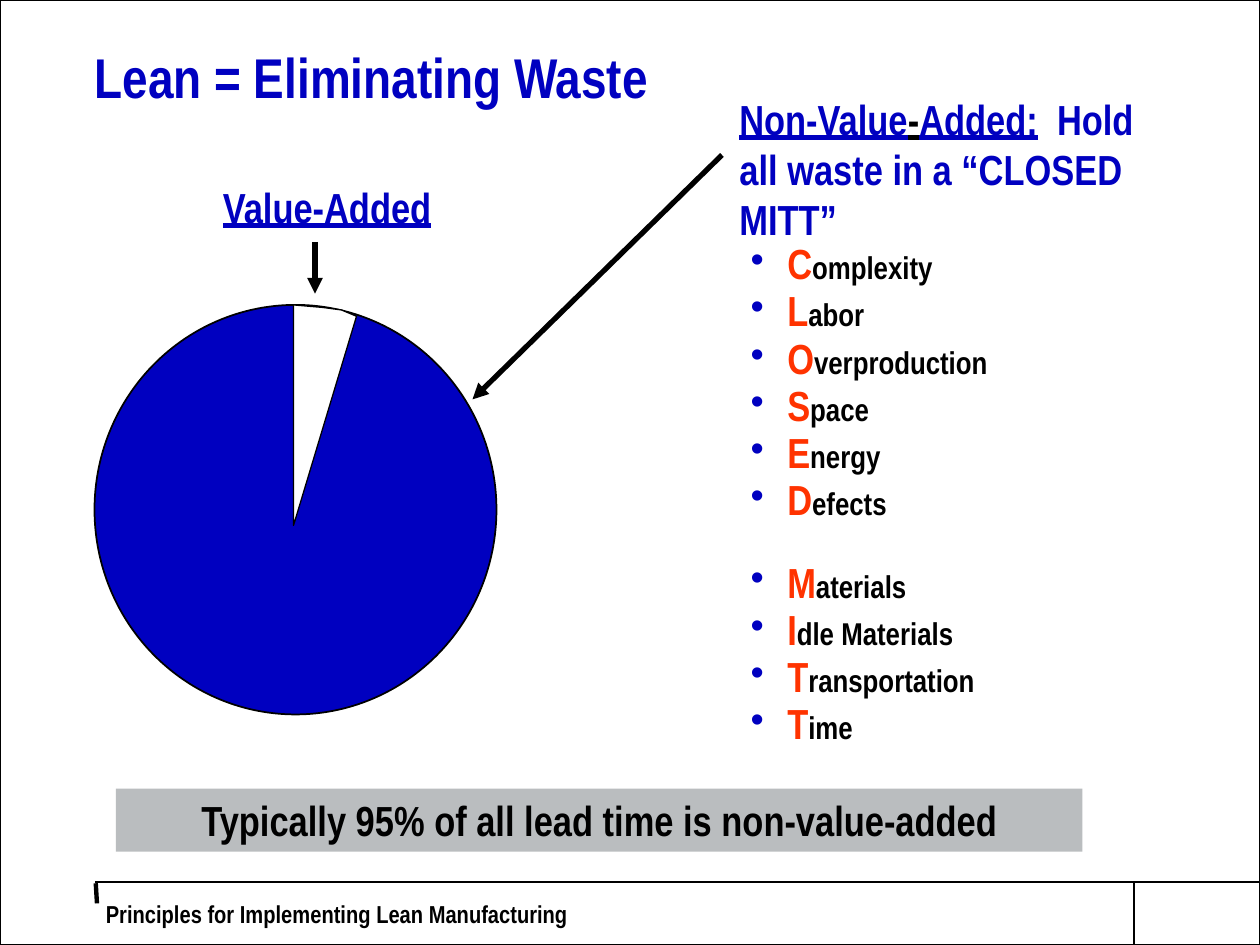
from dataclasses import dataclass

from lxml import etree
from pptx import Presentation
from pptx import util as u
from pptx.dml.color import RGBColor
from pptx.enum import shapes, text
from pptx.oxml.ns import qn


@dataclass(frozen=True)
class Theme:
    font: str = "Arial Narrow"
    blue: str = "0000C0"
    red: str = "FF3300"
    black: str = "000000"
    white: str = "FFFFFF"
    gray: str = "BABDBF"
    title: int = 32
    heading: int = 24
    body: int = 18
    footer: int = 14


def box(*lengths):
    return [u.Inches(n) for n in lengths]


class SlideBuilder:
    def __init__(self, slide, theme):
        self.slide = slide
        self.theme = theme

    def run(self, p, words, size, color, underline=False):
        r = p.add_run()
        r.text = words
        r.font.name = self.theme.font
        r.font.size = u.Pt(size)
        r.font.bold = True
        r.font.underline = underline
        r.font.color.rgb = RGBColor.from_string(color)

    def title(self, words, at):
        sp = self.slide.shapes.title
        sp.left, sp.top, sp.width, sp.height = box(*at)
        tf = sp.text_frame
        tf.margin_left = tf.margin_right = tf.margin_top = tf.margin_bottom = 0
        tf.vertical_anchor = text.MSO_ANCHOR.TOP
        p = tf.paragraphs[0]
        p.alignment = text.PP_ALIGN.LEFT
        p.line_spacing = 0.9
        self.run(p, words, self.theme.title, self.theme.blue)

    def textbox(self, at, wrap=True):
        tf = self.slide.shapes.add_textbox(*box(*at)).text_frame
        tf.word_wrap = wrap
        return tf

    def label(self, runs, at, wrap=True):
        p = self.textbox(at, wrap).paragraphs[0]
        for words, color, underline in runs:
            self.run(p, words, self.theme.heading, color, underline)

    def footer(self, words, at):
        tf = self.textbox(at)
        tf.margin_left = u.Inches(0.09)
        tf.margin_right = tf.margin_top = tf.margin_bottom = 0
        tf.vertical_anchor = text.MSO_ANCHOR.MIDDLE
        self.run(tf.paragraphs[0], words, self.theme.footer, self.theme.black)

    def bullet(self, p):
        pPr = p._p.get_or_add_pPr()
        pPr.set("marL", str(u.Inches(0.29)))
        pPr.set("indent", str(-u.Inches(0.29)))
        color = etree.SubElement(pPr, qn("a:buClr"))
        etree.SubElement(color, qn("a:srgbClr"), val=self.theme.blue)
        etree.SubElement(pPr, qn("a:buSzPct"), val="90000")
        etree.SubElement(pPr, qn("a:buFont"), typeface="Arial")
        etree.SubElement(pPr, qn("a:buChar"), char="•")

    def acronym_list(self, groups, at):
        tf = self.textbox(at)
        for g, words in enumerate(groups):
            for i, word in enumerate(words):
                first = g == 0 and i == 0
                p = tf.paragraphs[0] if first else tf.add_paragraph()
                self.bullet(p)
                p.line_spacing = 0.5
                if not first:
                    p.space_before = u.Pt(12.6 if i else 32.5)
                self.run(p, word[0], self.theme.heading, self.theme.red)
                self.run(p, word[1:], self.theme.body, self.theme.black)

    def paint(self, sp, fill=None, line=None):
        sp.shadow.inherit = False
        if fill:
            sp.fill.solid()
            sp.fill.fore_color.rgb = RGBColor.from_string(fill)
        else:
            sp.fill.background()
        if line:
            sp.line.color.rgb = RGBColor.from_string(self.theme.black)
            sp.line.width = u.Pt(line)
        else:
            sp.line.fill.background()
        return sp

    def shape(self, kind, at, fill=None, line=None):
        return self.paint(self.slide.shapes.add_shape(kind, *box(*at)), fill, line)

    def banner(self, words, at):
        tf = self.shape(shapes.MSO_SHAPE.RECTANGLE, at, self.theme.gray).text_frame
        tf.word_wrap = True
        tf.vertical_anchor = text.MSO_ANCHOR.TOP
        p = tf.paragraphs[0]
        p.alignment = text.PP_ALIGN.CENTER
        self.run(p, words, self.theme.heading, self.theme.black)

    def outline(self, points, fill, line):
        start, *rest = [box(*point) for point in points]
        builder = self.slide.shapes.build_freeform(*start)
        builder.add_line_segments(rest, close=True)
        self.paint(builder.convert_to_shape(), fill, line)

    def line(self, ends, width, arrow=False):
        cx = self.slide.shapes.add_connector(shapes.MSO_CONNECTOR.STRAIGHT, *box(*ends))
        cx.line.color.rgb = RGBColor.from_string(self.theme.black)
        cx.line.width = u.Pt(width)
        if arrow:
            etree.SubElement(cx.line._get_or_add_ln(), qn("a:tailEnd"), type="triangle")
        etree.SubElement(cx._element.spPr, qn("a:effectLst"))


def main():
    prs = Presentation()
    prs.slide_width, prs.slide_height = box(10, 7.5)
    theme = Theme()
    s = SlideBuilder(prs.slides.add_slide(prs.slide_layouts[5]), theme)

    s.line((10, 7, 0.75, 7), 0.75)
    s.line((9, 7, 9, 7.5), 0.75)
    s.line((0.76, 7.01, 0.77, 7.17), 2.5)
    s.shape(shapes.MSO_SHAPE.RECTANGLE, (0, 0, 10, 7.5), line=0.75)
    s.footer("Principles for Implementing Lean Manufacturing", (0.75, 7, 4.82, 0.5))
    s.title("Lean = Eliminating Waste", (0.75, 0.4, 6.25, 1.25))

    s.acronym_list(
        [
            ["Complexity", "Labor", "Overproduction", "Space", "Energy", "Defects"],
            ["Materials", "Idle Materials", "Transportation", "Time"],
        ],
        (5.86, 2.01, 3.67, 4.2),
    )
    s.label(
        [
            ("Non-Value", theme.blue, True),
            ("-", theme.black, True),
            ("Added:", theme.blue, True),
            ("  Hold all waste in a “CLOSED MITT”", theme.blue, False),
        ],
        (5.77, 0.69, 3.53, 1.3),
    )
    s.shape(shapes.MSO_SHAPE.OVAL, (0.75, 2.42, 3.19, 3.25), theme.blue, 1)
    s.label([("Value-Added", theme.blue, True)], (1.67, 1.39, 1.87, 0.5), wrap=False)
    s.banner("Typically 95% of all lead time is non-value-added", (0.92, 6.26, 7.67, 0.5))
    s.outline(
        [(2.33, 2.42), (2.33, 4.17), (2.83, 2.51), (2.71, 2.46), (2.56, 2.44)],
        theme.white,
        0.75,
    )
    s.line((5.73, 1.23, 3.75, 3.17), 3, arrow=True)
    s.line((2.5, 1.92, 2.5, 2.33), 3, arrow=True)

    prs.save("out.pptx")


if __name__ == "__main__":
    main()
